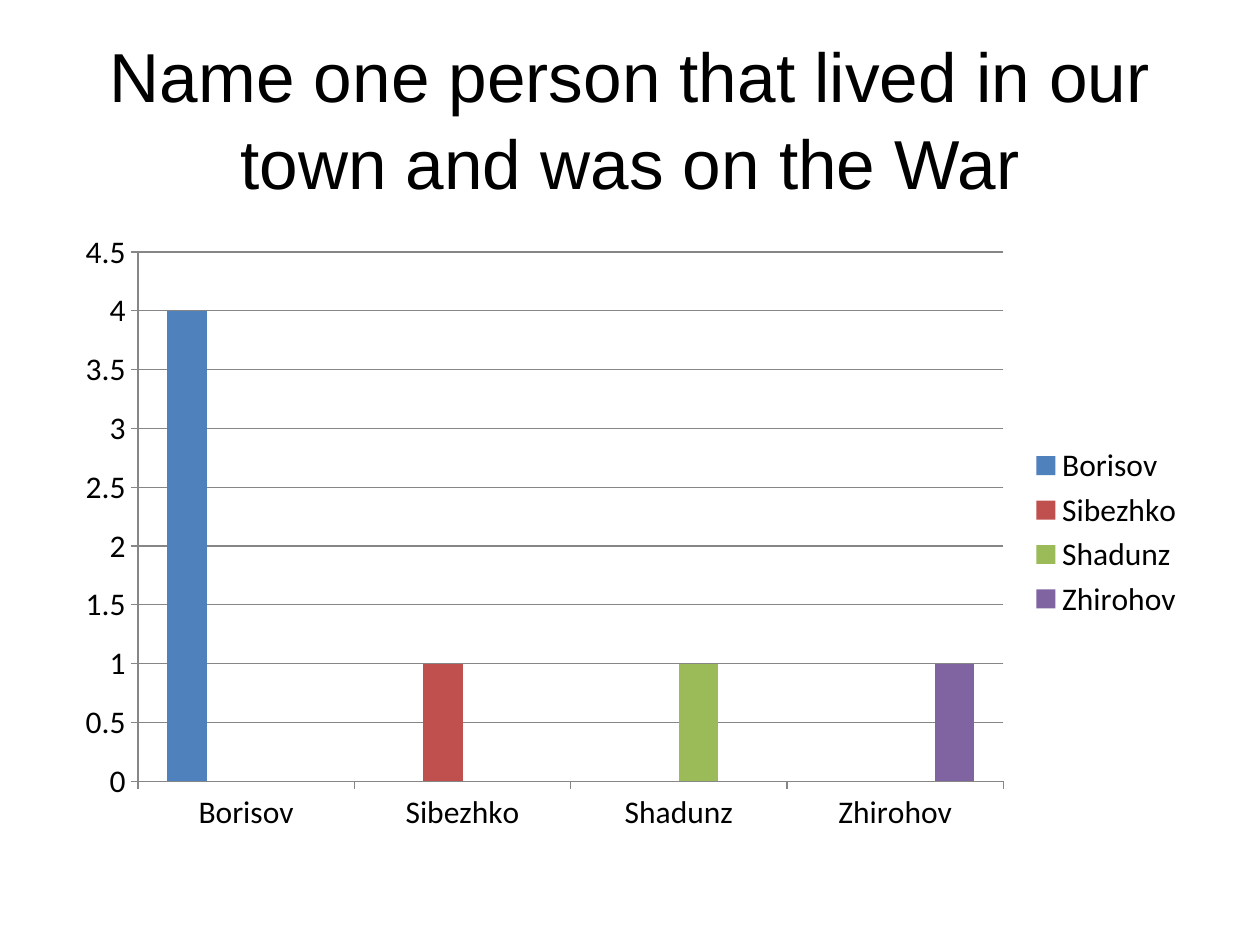
from pptx import Presentation
from pptx.chart.data import CategoryChartData
from pptx.dml.color import RGBColor
from pptx.enum.chart import XL_CHART_TYPE, XL_LEGEND_POSITION, XL_TICK_MARK
from pptx.enum.text import MSO_ANCHOR, MSO_AUTO_SIZE, PP_ALIGN
from pptx.util import Inches, Pt

THEME = {
    "title_font": "Arial",
    "title_size": Pt(39.6),
    "chart_font": "Calibri",
    "chart_size": Pt(18),
    "text": RGBColor.from_string("000000"),
    "line": RGBColor.from_string("868686"),
    "bars": ["4F81BD", "C0504D", "9BBB59", "8064A2"],
}
VOTES = {"Borisov": 4, "Sibezhko": 1, "Shadunz": 1, "Zhirohov": 1}

deck = Presentation()
deck.slide_width, deck.slide_height = Inches(10), Inches(7.5)
page = deck.slides.add_slide(deck.slide_layouts[5])
margin = int(deck.slide_width * 0.05)
content_width = deck.slide_width - 2 * margin

# Title
title = page.shapes.title
title.left, title.top = margin, int(deck.slide_height * 0.04)
title.width, title.height = content_width, Inches(1.25)
frame = title.text_frame
frame.text = "Name one person that lived in our town and was on the War"
frame.word_wrap = True
frame.auto_size = MSO_AUTO_SIZE.NONE
frame.vertical_anchor = MSO_ANCHOR.MIDDLE
para = frame.paragraphs[0]
para.alignment = PP_ALIGN.CENTER
para.line_spacing = 1.04
para.font.name = THEME["title_font"]
para.font.size = THEME["title_size"]
para.font.color.rgb = THEME["text"]

# Each person is a series with a value only in their own category
data = CategoryChartData()
data.categories = list(VOTES)
for person, count in VOTES.items():
    data.add_series(person, [count if name == person else None for name in VOTES])

chart = page.shapes.add_chart(
    XL_CHART_TYPE.COLUMN_CLUSTERED,
    margin, Inches(1.75), content_width, int(deck.slide_height * 0.66), data,
).chart
chart.has_title = False
chart.font.name = THEME["chart_font"]
chart.font.size = THEME["chart_size"]
chart.font.color.rgb = THEME["text"]
chart.has_legend = True
chart.legend.position = XL_LEGEND_POSITION.RIGHT
chart.legend.include_in_layout = False

plot = chart.plots[0]
plot.gap_width = 150
plot.overlap = 0
plot.vary_by_categories = False
for series, color in zip(plot.series, THEME["bars"]):
    series.format.fill.solid()
    series.format.fill.fore_color.rgb = RGBColor.from_string(color)
    series.invert_if_negative = False

for axis in (chart.category_axis, chart.value_axis):
    axis.major_tick_mark = XL_TICK_MARK.OUTSIDE
    axis.minor_tick_mark = XL_TICK_MARK.NONE
    axis.format.line.color.rgb = THEME["line"]
    axis.format.line.width = Pt(0.75)

scale = chart.value_axis
scale.minimum_scale, scale.maximum_scale, scale.major_unit = 0, 4.5, 0.5
scale.has_major_gridlines = True
scale.major_gridlines.format.line.color.rgb = THEME["line"]
scale.major_gridlines.format.line.width = Pt(0.75)

deck.save("out.pptx")
